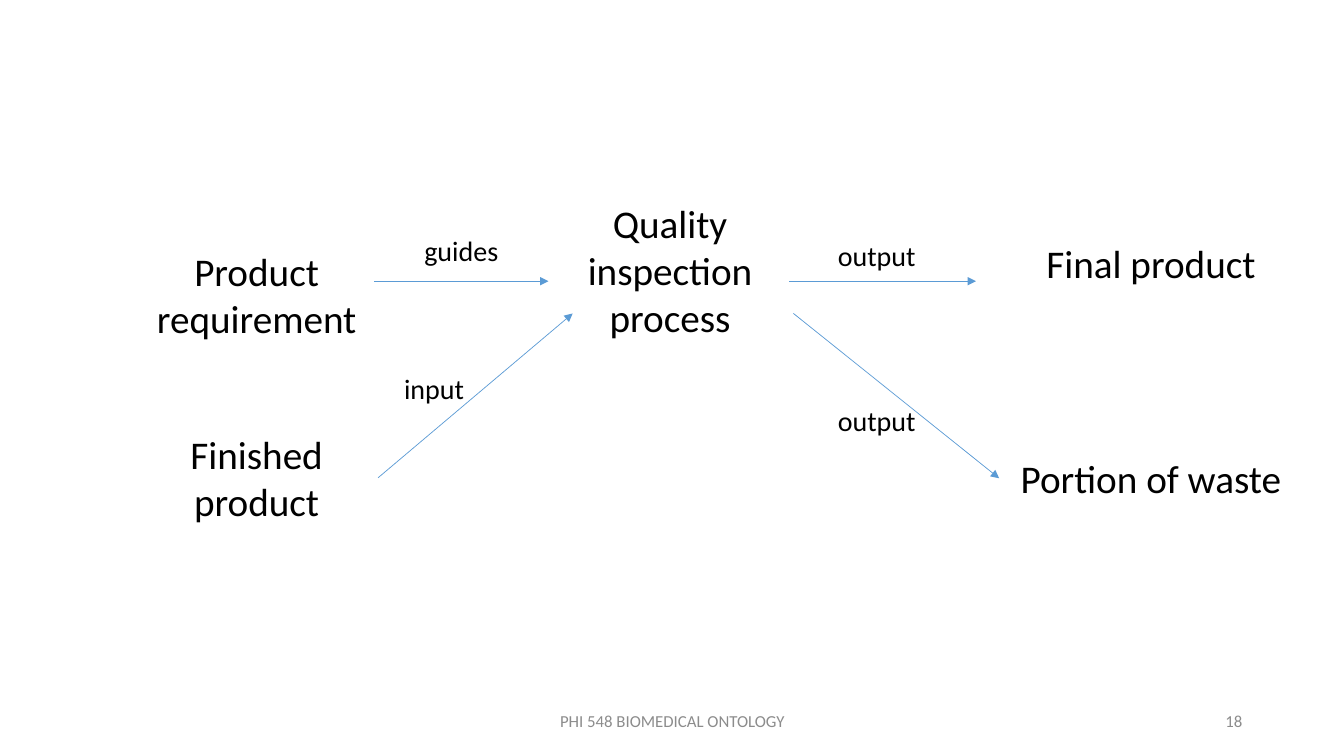
from pptx import Presentation
from pptx.dml.color import RGBColor
from pptx.enum.shapes import MSO_CONNECTOR
from pptx.enum.text import MSO_ANCHOR, PP_ALIGN
from pptx.oxml.ns import qn
from pptx.util import Inches, Pt
from lxml.etree import SubElement

WIDTH, HEIGHT = 13.33, 7.5
FONT, BLACK, GREY, BLUE = "Calibri", "000000", "8C8C8C", "5B9BD5"
LEFT, MIDDLE, RIGHT = (1.34, 2.41), (5.45, 2.39), (9.91, 3.01)
LINE_HEIGHT, PADDING = 0.47, 0.1
LABEL_SIZE = (1.21, 0.44)
FOOTER_TOP, FOOTER_HEIGHT = 6.95, 0.4
ARROW_ROW, BRANCH_ROW = 2.79, 3.11

NODES = {
    "process": ("Quality inspection process", MIDDLE, 1.93, 3),
    "requirement": ("Product requirement", LEFT, 2.4, 2),
    "finished": ("Finished product", LEFT, 4.22, 2),
    "final": ("Final product", RIGHT, 2.33, 1),
    "waste": ("Portion of waste", RIGHT, 4.46, 1),
}
LABELS = [
    ("guides", 3.97, 2.27),
    ("input", 3.7, 3.64),
    ("output", 8.09, 2.32),
    ("output", 8.09, 3.95),
]
FOOTERS = [
    ("PHI 548 BIOMEDICAL ONTOLOGY", 4.42, 4.5, PP_ALIGN.CENTER),
    ("18", 9.42, 3, PP_ALIGN.RIGHT),
]
CURVE, STRAIGHT = MSO_CONNECTOR.CURVE, MSO_CONNECTOR.STRAIGHT
ARROWS = [
    (CURVE, (3.71, ARROW_ROW), (5.44, ARROW_ROW), None, None),
    (CURVE, (7.83, ARROW_ROW), (9.68, ARROW_ROW), None, None),
    (STRAIGHT, (3.75, 4.74), (5.68, BRANCH_ROW), "finished", None),
    (STRAIGHT, (7.87, BRANCH_ROW), (9.91, 4.74), None, "waste"),
]


def color(value):
    return RGBColor.from_string(value)


def add_text(slide, text, box, size, fill=BLACK, align=PP_ALIGN.CENTER, anchor=MSO_ANCHOR.TOP):
    shape = slide.shapes.add_textbox(*map(Inches, box))
    frame = shape.text_frame
    frame.word_wrap = True
    frame.vertical_anchor = anchor
    paragraph = frame.paragraphs[0]
    paragraph.alignment = align
    run = paragraph.add_run()
    run.text = text
    run.font.name = FONT
    run.font.size = Pt(size)
    run.font.color.rgb = color(fill)
    return shape


def add_arrow(slide, kind, start, end, source, target):
    arrow = slide.shapes.add_connector(kind, *map(Inches, start + end))
    if source is not None:
        arrow.begin_connect(source, 3)
    if target is not None:
        arrow.end_connect(target, 1)
    arrow.line.color.rgb = color(BLUE)
    arrow.line.width = Pt(0.5)
    SubElement(arrow.line._get_or_add_ln(), qn("a:tailEnd"), type="triangle")
    SubElement(arrow._element.spPr, qn("a:effectLst"))


def main():
    presentation = Presentation()
    presentation.slide_width = Inches(WIDTH)
    presentation.slide_height = Inches(HEIGHT)
    slide = presentation.slides.add_slide(presentation.slide_layouts[6])

    nodes = {}
    for name, (text, (left, width), top, lines) in NODES.items():
        box = (left, top, width, lines * LINE_HEIGHT + PADDING)
        nodes[name] = add_text(slide, text, box, 28)
    for kind, start, end, source, target in ARROWS:
        add_arrow(slide, kind, start, end, nodes.get(source), nodes.get(target))
    for text, left, top in LABELS:
        add_text(slide, text, (left, top, *LABEL_SIZE), 20)
    for text, left, width, align in FOOTERS:
        box = (left, FOOTER_TOP, width, FOOTER_HEIGHT)
        add_text(slide, text, box, 12, GREY, align, MSO_ANCHOR.MIDDLE)

    presentation.save("out.pptx")


if __name__ == "__main__":
    main()
